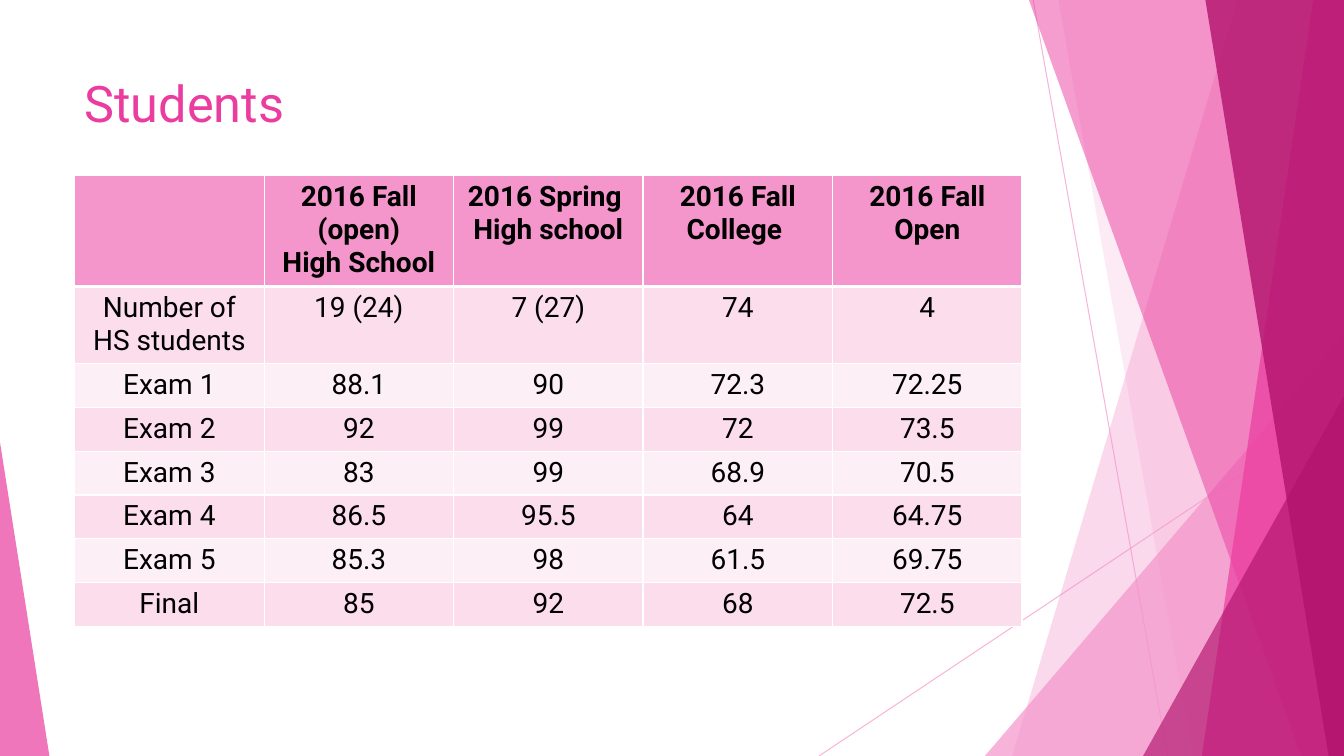
from dataclasses import dataclass

from lxml.etree import SubElement
from pptx import Presentation
from pptx.dml.color import RGBColor
from pptx.enum.shapes import MSO_CONNECTOR as Connector, MSO_SHAPE as Preset
from pptx.enum.text import MSO_ANCHOR as Anchor, PP_ALIGN as Align
from pptx.oxml.ns import qn
from pptx.slide import Slide
from pptx.table import _Cell as Cell
from pptx.util import Pt

WIDTH, HEIGHT = 960, 540
FONT = "Roboto"
COLORS = {
    "light": "F496CB",
    "pink": "EB3D9F",
    "dark": "B2136D",
    "odd_row": "FBDDEC",
    "even_row": "FDEFF6",
    "white": "FFFFFF",
    "black": "000000",
}


@dataclass
class Ray:
    start: tuple[float, float]
    end: tuple[float, float]


@dataclass
class Band:
    top: float
    bottom_left: float
    color: str
    opacity: int


@dataclass
class Wedge:
    left: float
    top: float
    width: float
    apex: float
    color: str
    opacity: int


RAYS = [Ray((738, 0), (834, HEIGHT)), Ray((WIDTH, 290), (585, HEIGHT))]
FACETS = [
    Band(884, 723, "light", 36),
    Band(756, 852, "light", 20),
    Wedge(703.5, 240, 256.5, 1, "light", 72),
    Band(735, 929.5, "pink", 50),
    Band(938, 858.5, "pink", 70),
    Band(861, 949, "dark", 80),
    Wedge(816.5, 283, 143.5, 1, "dark", 66),
    Wedge(0, 316, 35.3, 0, "pink", 70),
]

TABLE_LEFT, TABLE_TOP, COLUMN_WIDTH = 53.3, 125.3, 135.36
HEADER_HEIGHT, COUNT_HEIGHT, SCORE_HEIGHT = 77.5, 54, 30.7
ROWS = [
    ["", "2016 Fall (open)\nHigh School", "2016 Spring \nHigh school",
     "2016 Fall\nCollege ", "2016 Fall\nOpen"],
    ["Number of HS students", "19 (24)", "7 (27)", "74", "4"],
    ["Exam 1", "88.1", "90", "72.3", "72.25"],
    ["Exam 2", "92", "99", "72", "73.5"],
    ["Exam 3", "83", "99", "68.9", "70.5"],
    ["Exam 4", "86.5", "95.5", "64", "64.75"],
    ["Exam 5", "85.3", "98", "61.5", "69.75"],
    ["Final", "85", "92", "68", "72.5"],
]


def rgb(name: str) -> RGBColor:
    return RGBColor.from_string(COLORS[name])


def set_opacity(shape, percent: int) -> None:
    for color in shape.element.spPr.iter(qn("a:srgbClr")):
        SubElement(color, qn("a:alpha"), val=str(percent * 1000))


def draw_ray(slide: Slide, ray: Ray) -> None:
    line = slide.shapes.add_connector(
        Connector.STRAIGHT, *(Pt(value) for value in ray.start + ray.end))
    line.line.color.rgb = rgb("light")
    line.line.width = Pt(0.75)
    set_opacity(line, 70)
    SubElement(line.element.spPr, qn("a:effectLst"))


def draw_facet(slide: Slide, facet: Band | Wedge) -> None:
    if isinstance(facet, Band):
        builder = slide.shapes.build_freeform(Pt(facet.top), 0)
        corners = [(WIDTH, 0), (WIDTH, HEIGHT), (facet.bottom_left, HEIGHT)]
        builder.add_line_segments([(Pt(x), Pt(y)) for x, y in corners])
        shape = builder.convert_to_shape()
    else:
        shape = slide.shapes.add_shape(
            Preset.ISOSCELES_TRIANGLE, Pt(facet.left), Pt(facet.top),
            Pt(facet.width), Pt(HEIGHT - facet.top))
        shape.adjustments[0] = facet.apex
    shape.shadow.inherit = False
    shape.fill.solid()
    shape.fill.fore_color.rgb = rgb(facet.color)
    shape.line.fill.background()
    set_opacity(shape, facet.opacity)


def style_paragraph(paragraph, size: float, color: str, bold: bool = False) -> None:
    paragraph.font.name = FONT
    paragraph.font.size = Pt(size)
    paragraph.font.bold = bold
    paragraph.font.color.rgb = rgb(color)


def draw_title(slide: Slide) -> None:
    box = slide.shapes.add_textbox(Pt(53.3), Pt(48), Pt(676.8), Pt(104))
    frame = box.text_frame
    frame.word_wrap = True
    frame.vertical_anchor = Anchor.TOP
    frame.text = "Students"
    style_paragraph(frame.paragraphs[0], 36, "pink")


def set_borders(cell: Cell, top: float, bottom: float) -> None:
    properties = cell._tc.get_or_add_tcPr()
    for side, width in {"L": 1, "R": 1, "T": top, "B": bottom}.items():
        border = SubElement(properties, qn(f"a:ln{side}"), w=str(Pt(width)))
        fill = SubElement(border, qn("a:solidFill"))
        SubElement(fill, qn("a:srgbClr"), val=COLORS["white"])


def fill_cell(cell: Cell, text: str, row_index: int) -> None:
    is_header = row_index == 0
    set_borders(cell, 3 if row_index == 1 else 1, 3 if is_header else 1)
    cell.fill.solid()
    cell.fill.fore_color.rgb = rgb(
        "light" if is_header else "odd_row" if row_index % 2 else "even_row")
    cell.text = text
    for paragraph in cell.text_frame.paragraphs:
        paragraph.alignment = Align.CENTER
        style_paragraph(paragraph, 20, "black", is_header)


def draw_scores(slide: Slide) -> None:
    heights = [HEADER_HEIGHT, COUNT_HEIGHT] + [SCORE_HEIGHT] * (len(ROWS) - 2)
    column_count = len(ROWS[0])
    table = slide.shapes.add_table(
        len(ROWS), column_count, Pt(TABLE_LEFT), Pt(TABLE_TOP),
        Pt(COLUMN_WIDTH * column_count), Pt(sum(heights))).table
    for column in table.columns:
        column.width = Pt(COLUMN_WIDTH)
    for row_index, (texts, height) in enumerate(zip(ROWS, heights)):
        table.rows[row_index].height = Pt(height)
        for column_index, text in enumerate(texts):
            fill_cell(table.cell(row_index, column_index), text, row_index)


def main() -> None:
    presentation = Presentation()
    presentation.slide_width, presentation.slide_height = Pt(WIDTH), Pt(HEIGHT)
    slide = presentation.slides.add_slide(presentation.slide_layouts[6])
    for ray in RAYS:
        draw_ray(slide, ray)
    for facet in FACETS:
        draw_facet(slide, facet)
    draw_title(slide)
    draw_scores(slide)
    presentation.save("out.pptx")


if __name__ == "__main__":
    main()
